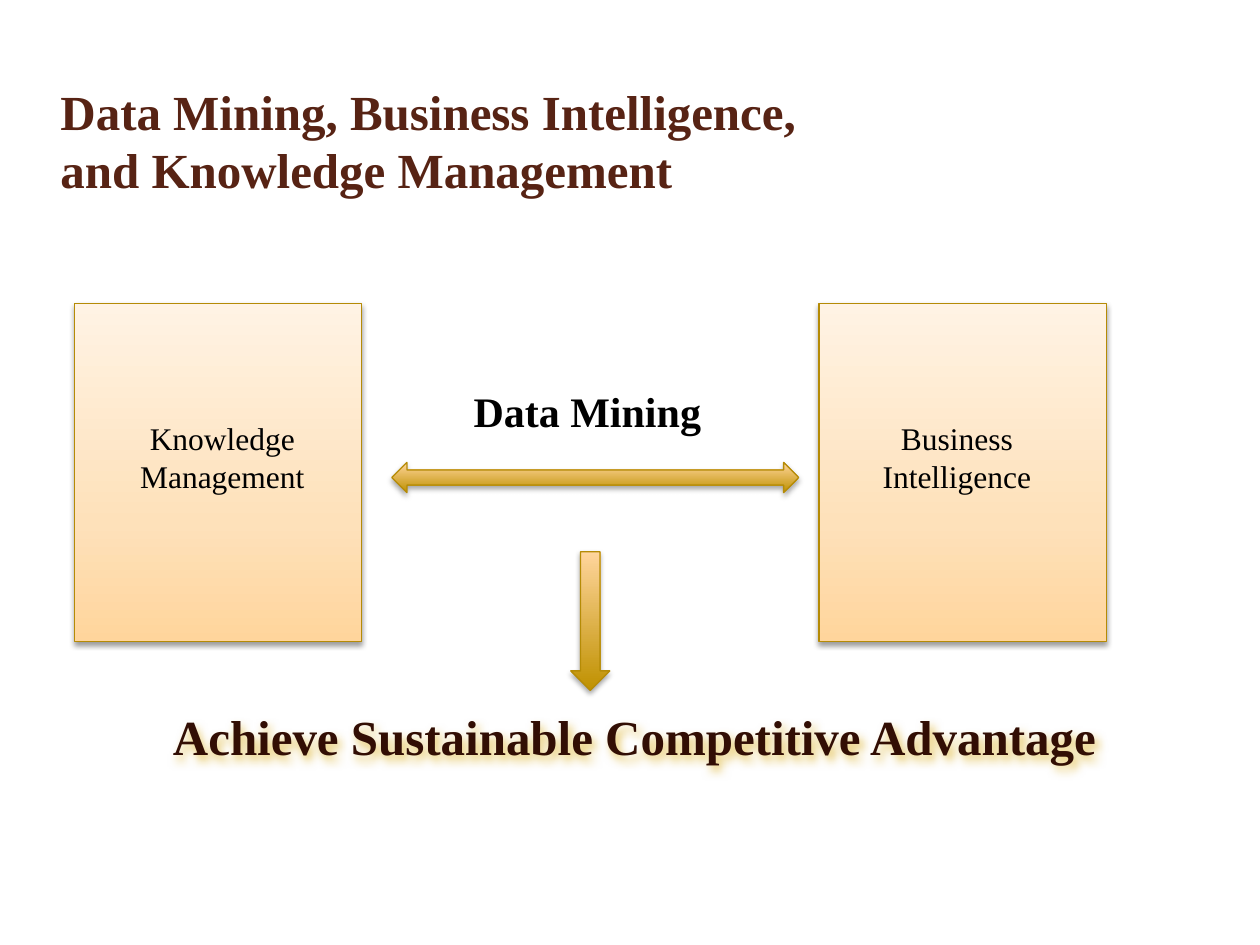
from lxml import etree
from pptx import Presentation
from pptx.dml.color import RGBColor
from pptx.enum import shapes, text
from pptx.oxml.ns import qn
from pptx.util import Inches, Pt

THEME = {
    "font": "Times New Roman",
    "title": ("572314", 28, True),
    "goal": ("320E04", 28, True),
    "link": ("000000", 24, True),
    "domain": ("000000", 18, False),
    "outline": "B58B06",
    "panel": [(0, "FFD59C"), (35, "FEE1BA"), (100, "FFF3E4")],
    "arrow": [(0, "BF9100"), (100, "FFD59C")],
    "panel_shadow": ("000000", 38, 3.1, 1.6, 90),
    "arrow_shadow": ("000000", 35, 3.1, 1.8, 90),
    "goal_shadow": ("D6A300", 60, 5, 3, 60),
}
KIND = shapes.MSO_SHAPE
ALIGN = text.PP_ALIGN
ANCHOR = text.MSO_ANCHOR

LABELS = [
    ("Data Mining, Business Intelligence, and Knowledge Management",
     "title", (0.35, 0.6, 6.18, 1.02), ALIGN.LEFT),
    ("Achieve Sustainable Competitive Advantage",
     "goal", (1.06, 5.56, 7.95, 0.88), ALIGN.CENTER),
    ("Data Mining", "link", (3.66, 3.01, 2.05, 0.5), ALIGN.LEFT),
]
DOMAINS = [
    ("Knowledge Management", 0.59, 0.98),
    ("Business Intelligence", 6.5, 6.81),
]
ARROWS = [
    (KIND.DOWN_ARROW, (4.53, 4.38, 0.31, 1.1)),
    (KIND.LEFT_RIGHT_ARROW, (3.11, 3.67, 3.23, 0.24)),
]


def add_color(parent, color):
    return etree.SubElement(parent, qn("a:srgbClr"), val=color)


def add_shadow(shape, style):
    color, opacity, blur, distance, angle = style
    shape.shadow.inherit = False
    effects = shape._element.spPr.find(qn("a:effectLst"))
    shadow = etree.SubElement(
        effects, qn("a:outerShdw"), blurRad=str(Pt(blur)), dist=str(Pt(distance)),
        dir=str(angle * 60000), algn="ctr", rotWithShape="0")
    etree.SubElement(add_color(shadow, color), qn("a:alpha"), val=str(opacity * 1000))


def add_block(parent, kind, box, role):
    block = parent.add_shape(kind, *map(Inches, box))
    block.fill.gradient()
    block.fill.gradient_angle = 90
    stops = block._element.spPr.find(".//" + qn("a:gsLst"))
    stops.clear()
    for position, color in THEME[role]:
        add_color(etree.SubElement(stops, qn("a:gs"), pos=str(position * 1000)), color)
    block.line.color.rgb = RGBColor.from_string(THEME["outline"])
    block.line.width = Pt(0.75)
    add_shadow(block, THEME[role + "_shadow"])


def add_label(parent, wording, role, box, align):
    label = parent.add_textbox(*map(Inches, box))
    frame = label.text_frame
    frame.word_wrap = True
    frame.text = wording
    paragraph = frame.paragraphs[0]
    paragraph.alignment = align
    color, size, bold = THEME[role]
    font = paragraph.runs[0].font
    font.name, font.size, font.bold = THEME["font"], Pt(size), bold
    font.color.rgb = RGBColor.from_string(color)
    if role == "title":
        frame.vertical_anchor = ANCHOR.MIDDLE
        frame.margin_left = Inches(0.13)
    if role == "goal":
        add_shadow(label, THEME["goal_shadow"])


def main():
    deck = Presentation()
    deck.slide_width, deck.slide_height = Inches(10), Inches(7.5)
    slide = deck.slides.add_slide(deck.slide_layouts[6])
    for wording, panel_left, label_left in DOMAINS:
        domain = slide.shapes.add_group_shape().shapes
        add_block(domain, KIND.RECTANGLE, (panel_left, 2.41, 2.28, 2.68), "panel")
        add_label(domain, wording, "domain", (label_left, 3.28, 1.57, 0.71), ALIGN.CENTER)
    for kind, box in ARROWS:
        add_block(slide.shapes, kind, box, "arrow")
    for label in LABELS:
        add_label(slide.shapes, *label)
    deck.save("out.pptx")


if __name__ == "__main__":
    main()
